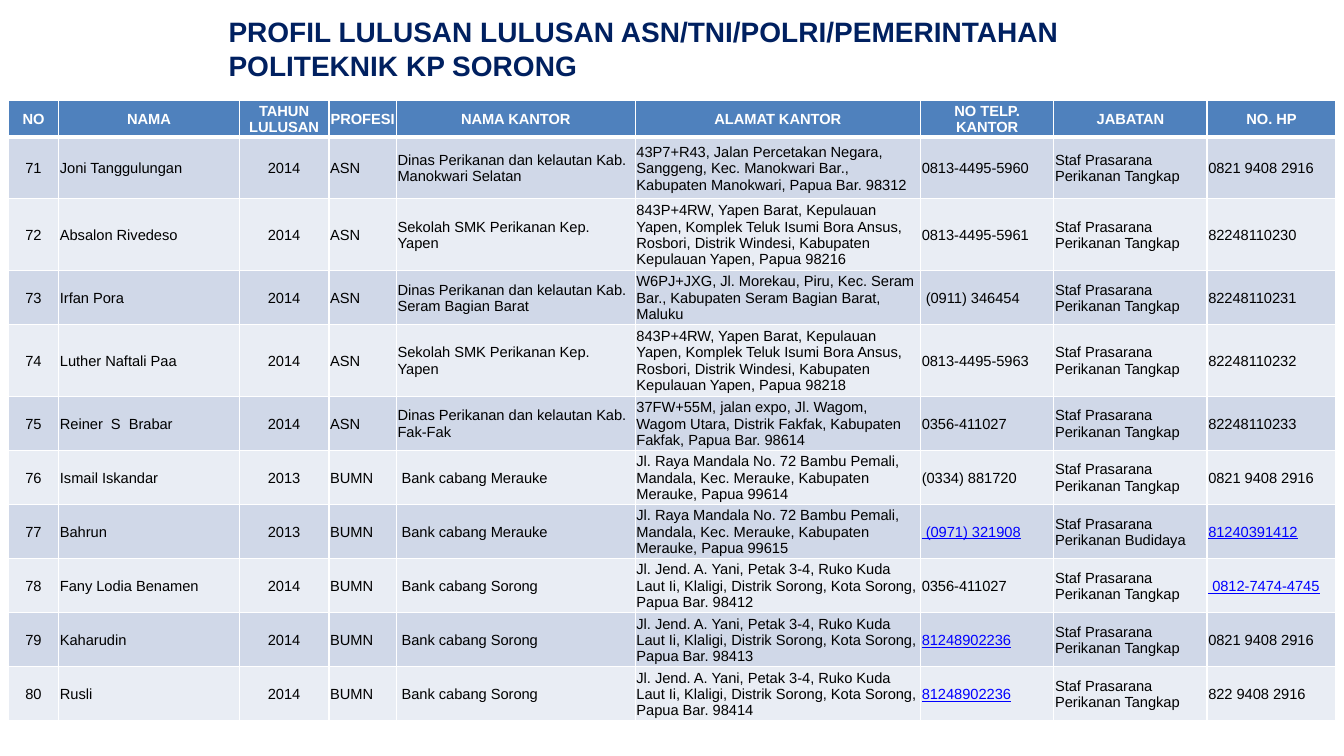
from dataclasses import dataclass

from lxml import etree
from pptx import Presentation
from pptx import util as u
from pptx.dml.color import RGBColor
from pptx.enum import text as t
from pptx.oxml.ns import qn


@dataclass(frozen=True)
class Theme:
    font: str = "Arial"
    title: str = "002060"
    header: str = "4F81BD"
    bands: tuple = ("D0D8E8", "E9EDF4")
    light: str = "FFFFFF"
    dark: str = "000000"
    link: str = "0000FF"
    title_size: float = 20
    table_size: float = 10.5
    thin: float = 1
    thick: float = 3


# Table content
TITLE = ["PROFIL LULUSAN LULUSAN ASN/TNI/POLRI/PEMERINTAHAN", "POLITEKNIK KP SORONG"]
HEADINGS = ["NO", "NAMA", "TAHUN LULUSAN", "PROFESI", "NAMA KANTOR",
            "ALAMAT KANTOR", "NO TELP. KANTOR", "JABATAN", "NO. HP"]
FIRST_NUMBER = 71
DINAS = "Dinas Perikanan dan kelautan Kab. "
SCHOOL = "Sekolah SMK Perikanan Kep. Yapen"
MERAUKE = " Bank cabang Merauke"
SORONG = " Bank cabang Sorong"
YAPEN_ROAD = ("843P+4RW, Yapen Barat, Kepulauan Yapen, Komplek Teluk Isumi Bora Ansus, "
              "Rosbori, Distrik Windesi, Kabupaten Kepulauan Yapen, Papua ")
MANDALA_ROAD = ("Jl. Raya Mandala No. 72 Bambu Pemali, Mandala, Kec. Merauke, "
                "Kabupaten Merauke, Papua ")
YANI_ROAD = ("Jl. Jend. A. Yani, Petak 3-4, Ruko Kuda Laut Ii, Klaligi, "
             "Distrik Sorong, Kota Sorong, Papua Bar. ")
CATCH = "Staf Prasarana Perikanan Tangkap"
FARMING = "Staf Prasarana Perikanan Budidaya"
GRADUATES = [
    ("Joni Tanggulungan", "2014", "ASN", DINAS + "Manokwari Selatan",
     "43P7+R43, Jalan Percetakan Negara, Sanggeng, Kec. Manokwari Bar., "
     "Kabupaten Manokwari, Papua Bar. 98312", "0813-4495-5960", CATCH, "0821 9408 2916"),
    ("Absalon Rivedeso", "2014", "ASN", SCHOOL, YAPEN_ROAD + "98216",
     "0813-4495-5961", CATCH, "82248110230"),
    ("Irfan Pora", "2014", "ASN", DINAS + "Seram Bagian Barat",
     "W6PJ+JXG, Jl. Morekau, Piru, Kec. Seram Bar., Kabupaten Seram Bagian Barat, Maluku",
     " (0911) 346454", CATCH, "82248110231"),
    ("Luther Naftali Paa", "2014", "ASN", SCHOOL, YAPEN_ROAD + "98218",
     "0813-4495-5963", CATCH, "82248110232"),
    ("Reiner  S  Brabar", "2014", "ASN", DINAS + "Fak-Fak",
     "37FW+55M, jalan expo, Jl. Wagom, Wagom Utara, Distrik Fakfak, "
     "Kabupaten Fakfak, Papua Bar. 98614", "0356‑411027", CATCH, "82248110233"),
    ("Ismail Iskandar", "2013", "BUMN", MERAUKE, MANDALA_ROAD + "99614",
     "(0334) 881720", CATCH, "0821 9408 2916"),
    ("Bahrun", "2013", "BUMN", MERAUKE, MANDALA_ROAD + "99615",
     " (0971) 321908", FARMING, "81240391412"),
    ("Fany Lodia Benamen", "2014", "BUMN", SORONG, YANI_ROAD + "98412",
     "0356‑411027", CATCH, " 0812-7474-4745"),
    ("Kaharudin", "2014", "BUMN", SORONG, YANI_ROAD + "98413",
     "81248902236", CATCH, "0821 9408 2916"),
    ("Rusli", "2014", "BUMN", SORONG, YANI_ROAD + "98414",
     "81248902236", CATCH, "822 9408 2916"),
]
LINKED = {" (0971) 321908", "81240391412", " 0812-7474-4745", "81248902236"}
CENTRED_COLUMNS = {0, 2}

# Table measures in centimetres
COLUMN_WIDTHS = [1.27, 4.55, 2.26, 1.7, 6.02, 7.19, 3.36, 3.86, 3.25]
HEADER_HEIGHT, THREE_LINES, FOUR_LINES = 0.91, 1.35, 1.8
ROW_HEIGHTS = ([HEADER_HEIGHT, 1.55, FOUR_LINES, THREE_LINES, FOUR_LINES]
               + [THREE_LINES] * 6)


def write(para, words, *, font, size, color, bold=False, underline=False, centred=False):
    """Put one formatted span of text in a paragraph."""
    para.alignment = t.PP_ALIGN.CENTER if centred else t.PP_ALIGN.LEFT
    span = para.add_run()
    span.text = words
    span.font.name = font
    span.font.size = u.Pt(size)
    span.font.bold = bold
    span.font.underline = underline
    span.font.color.rgb = RGBColor.from_string(color)


class SlideBuilder:
    def __init__(self, page, theme):
        self.page = page
        self.theme = theme

    def title(self, lines, left, top, width, height):
        box = self.page.shapes.add_textbox(*map(u.Cm, (left, top, width, height)))
        frame = box.text_frame
        frame.word_wrap = True
        frame.auto_size = t.MSO_AUTO_SIZE.SHAPE_TO_FIT_TEXT
        for index, line in enumerate(lines):
            para = frame.add_paragraph() if index else frame.paragraphs[0]
            write(para, line, font=self.theme.font, size=self.theme.title_size,
                  color=self.theme.title, bold=True)

    def table(self, rows, left, top, widths, heights):
        frame = self.page.shapes.add_table(
            len(rows), len(widths),
            *map(u.Cm, (left, top, sum(widths), sum(heights))))
        table = frame.table
        for column, width in zip(table.columns, widths):
            column.width = u.Cm(width)
        for row, height in zip(table.rows, heights):
            row.height = u.Cm(height)
        for row_index, row in enumerate(rows):
            for column_index, words in enumerate(row):
                self.cell(table.cell(row_index, column_index), words,
                          row_index, column_index)

    def cell(self, cell, words, row, column):
        theme = self.theme
        heading, linked = row == 0, words in LINKED
        cell.margin_left = cell.margin_right = cell.margin_top = u.Cm(0.03)
        cell.margin_bottom = 0
        cell.vertical_anchor = t.MSO_ANCHOR.MIDDLE
        color = theme.light if heading else theme.link if linked else theme.dark
        write(cell.text_frame.paragraphs[0], words, font=theme.font,
              size=theme.table_size, color=color, bold=heading, underline=linked,
              centred=heading or column in CENTRED_COLUMNS)
        # Borders come before the fill in the cell properties
        self.border(cell, "a:lnL", theme.thin)
        self.border(cell, "a:lnR", theme.thin)
        self.border(cell, "a:lnT", theme.thick if row == 1 else theme.thin)
        self.border(cell, "a:lnB", theme.thick if heading else theme.thin)
        cell.fill.solid()
        fill = theme.header if heading else theme.bands[(row - 1) % 2]
        cell.fill.fore_color.rgb = RGBColor.from_string(fill)

    def border(self, cell, side, width):
        properties = cell._tc.get_or_add_tcPr()
        line = etree.SubElement(properties, qn(side), w=str(u.Pt(width)))
        paint = etree.SubElement(line, qn("a:solidFill"))
        etree.SubElement(paint, qn("a:srgbClr"), val=self.theme.light)


def main():
    deck = Presentation()
    deck.slide_width, deck.slide_height = u.Cm(33.87), u.Cm(19.05)
    builder = SlideBuilder(deck.slides.add_slide(deck.slide_layouts[6]), Theme())
    builder.title(TITLE, 5.51, 0.25, 26.67, 1.96)
    records = [(str(number), *graduate)
               for number, graduate in enumerate(GRADUATES, FIRST_NUMBER)]
    builder.table([HEADINGS, *records], 0.21, 2.54, COLUMN_WIDTHS, ROW_HEIGHTS)
    deck.save("out.pptx")


if __name__ == "__main__":
    main()
